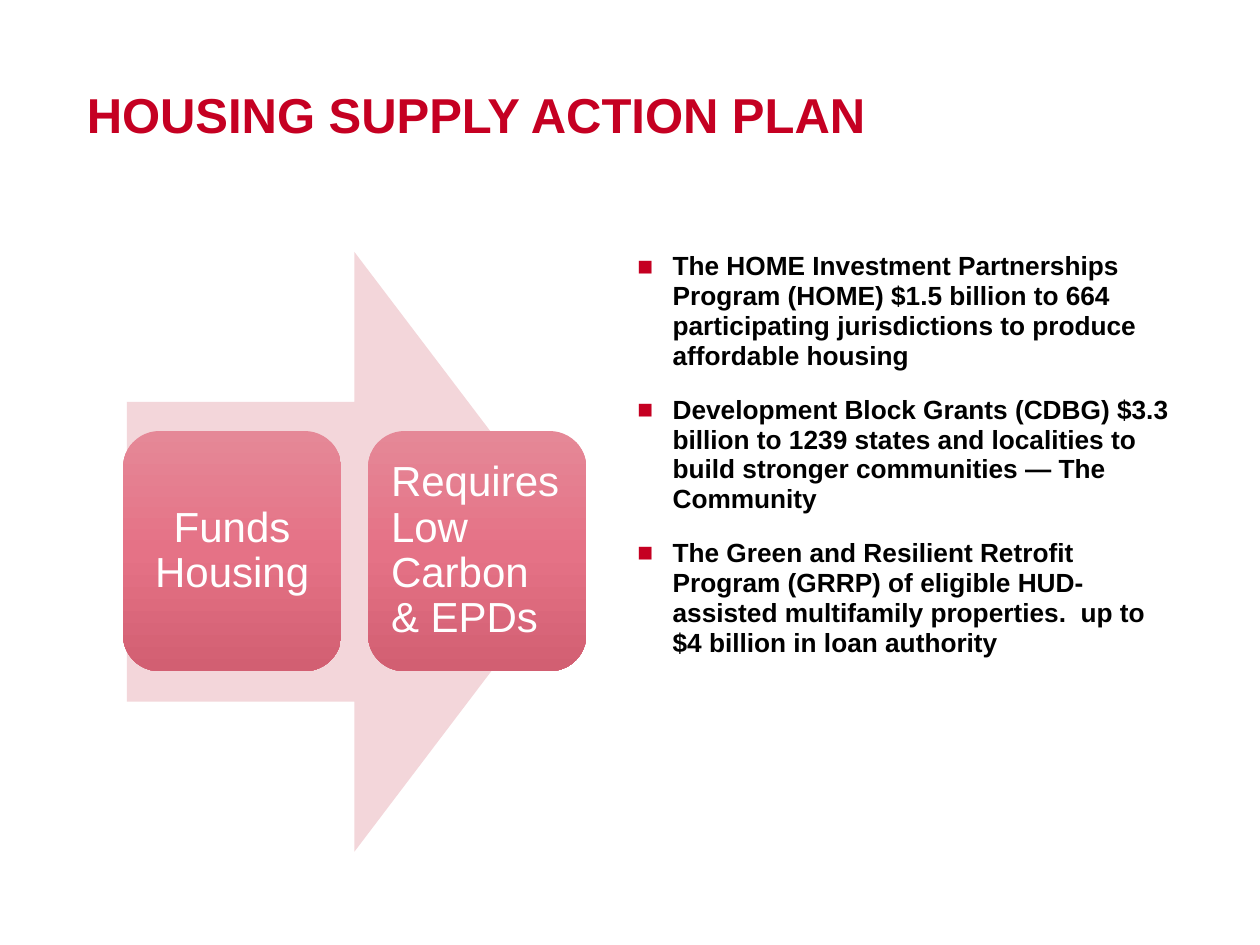
from dataclasses import dataclass

from lxml import etree
from pptx import Presentation
from pptx.dml.color import RGBColor
from pptx.enum.shapes import MSO_SHAPE
from pptx.enum.text import MSO_ANCHOR, PP_ALIGN
from pptx.oxml.ns import qn
from pptx.util import Cm, Pt

ARROW = MSO_SHAPE.RIGHT_ARROW
ROUNDED = MSO_SHAPE.ROUNDED_RECTANGLE
TOP, MIDDLE = MSO_ANCHOR.TOP, MSO_ANCHOR.MIDDLE
LEFT, CENTER = PP_ALIGN.LEFT, PP_ALIGN.CENTER

FONT = "Arial"
COLORS = {
    "red": "C50022",
    "black": "000000",
    "white": "FFFFFF",
    "arrow": "F3D6DA",
    "card_top": "E58897",
    "card_middle": "E57286",
    "card_bottom": "D25F72",
}
CARD_GRADIENT = {0: "card_top", 50: "card_middle", 100: "card_bottom"}

TITLE = "HOUSING SUPPLY ACTION PLAN"
PROGRAMS = [
    "The HOME Investment Partnerships Program (HOME) $1.5 billion to 664 "
    "participating jurisdictions to produce affordable housing",
    "Development Block Grants (CDBG) $3.3 billion to 1239 states and localities "
    "to build stronger communities — The Community",
    "The Green and Resilient Retrofit Program (GRRP) of eligible HUD-assisted "
    "multifamily properties.  up to $4 billion in loan authority",
]


@dataclass
class Card:
    text: str
    alignment: PP_ALIGN


CARDS = [Card("Funds Housing", CENTER), Card("Requires Low Carbon & EPDs", LEFT)]
CARD_LEFT, CARD_TOP, CARD_WIDTH, CARD_HEIGHT = 2.48, 8.69, 4.4, 4.84
CARD_PITCH = 4.94


def add_bullet(paragraph, indent: float) -> None:
    """Give the paragraph a hanging red square bullet."""
    properties = paragraph._p.get_or_add_pPr()
    properties.set("marL", str(Cm(indent)))
    properties.set("indent", str(-Cm(indent)))
    color = etree.SubElement(properties, qn("a:buClr"))
    etree.SubElement(color, qn("a:srgbClr"), val=COLORS["red"])
    etree.SubElement(properties, qn("a:buFont"), typeface=FONT)
    etree.SubElement(properties, qn("a:buChar"), char="■")


def write_text(shape, texts: list[str], *, size: float, color: str, bold: bool = False,
               alignment: PP_ALIGN = LEFT, anchor: MSO_ANCHOR = TOP, inset: float = 0,
               line_spacing: float = 0.9, gap: float = 0, bulleted: bool = False) -> None:
    """Fill a shape with one formatted paragraph per text."""
    frame = shape.text_frame
    frame.word_wrap = True
    frame.vertical_anchor = anchor
    frame.margin_left = frame.margin_right = Cm(inset)
    frame.margin_top = frame.margin_bottom = Cm(inset)
    for index, text in enumerate(texts):
        paragraph = frame.paragraphs[0] if index == 0 else frame.add_paragraph()
        if bulleted:
            add_bullet(paragraph, 0.71)
        paragraph.alignment = alignment
        paragraph.line_spacing = line_spacing
        if index:
            paragraph.space_before = Pt(gap)
        run = paragraph.add_run()
        run.text = text
        run.font.name = FONT
        run.font.size = Pt(size)
        run.font.bold = bold
        run.font.color.rgb = RGBColor.from_string(COLORS[color])


def add_plain_shape(slide, kind: MSO_SHAPE, left: float, top: float,
                    width: float, height: float):
    """Add a preset shape without outline or shadow."""
    shape = slide.shapes.add_shape(kind, Cm(left), Cm(top), Cm(width), Cm(height))
    shape.shadow.inherit = False
    shape.line.fill.background()
    return shape


def fill_gradient(shape, stops: dict[int, str]) -> None:
    """Fill a shape from top to bottom with the given percentage stops."""
    shape.fill.gradient()
    shape.fill.gradient_angle = 270
    stop_list = shape._element.spPr.find(qn("a:gradFill")).find(qn("a:gsLst"))
    for stop in list(stop_list):
        stop_list.remove(stop)
    for percent, color in stops.items():
        stop = etree.SubElement(stop_list, qn("a:gs"), pos=str(percent * 1000))
        etree.SubElement(stop, qn("a:srgbClr"), val=COLORS[color])


def add_card(slide, card: Card, left: float) -> None:
    """Draw one rounded gradient card with its text."""
    shape = add_plain_shape(slide, ROUNDED, left, CARD_TOP, CARD_WIDTH, CARD_HEIGHT)
    fill_gradient(shape, CARD_GRADIENT)
    write_text(shape, [card.text], size=24, color="white", alignment=card.alignment,
               anchor=MIDDLE, inset=0.25)


def main() -> None:
    """Build the housing supply slide and save it."""
    presentation = Presentation()
    presentation.slide_width, presentation.slide_height = Cm(25.4), Cm(19.05)
    slide = presentation.slides.add_slide(presentation.slide_layouts[6])

    title = slide.shapes.add_textbox(Cm(1.75), Cm(1.83), Cm(21.9), Cm(3.68))
    write_text(title, [TITLE], size=28, color="red", bold=True)

    programs = slide.shapes.add_textbox(Cm(12.85), Cm(5.08), Cm(10.8), Cm(12.09))
    write_text(programs, PROGRAMS, size=15, color="black", bold=True,
               line_spacing=0.95, gap=13.5, bulleted=True)

    arrow = add_plain_shape(slide, ARROW, 2.56, 5.08, 9.17, 12.09)
    arrow.fill.solid()
    arrow.fill.fore_color.rgb = RGBColor.from_string(COLORS["arrow"])

    for index, card in enumerate(CARDS):
        add_card(slide, card, CARD_LEFT + index * CARD_PITCH)

    presentation.save("out.pptx")


if __name__ == "__main__":
    main()
